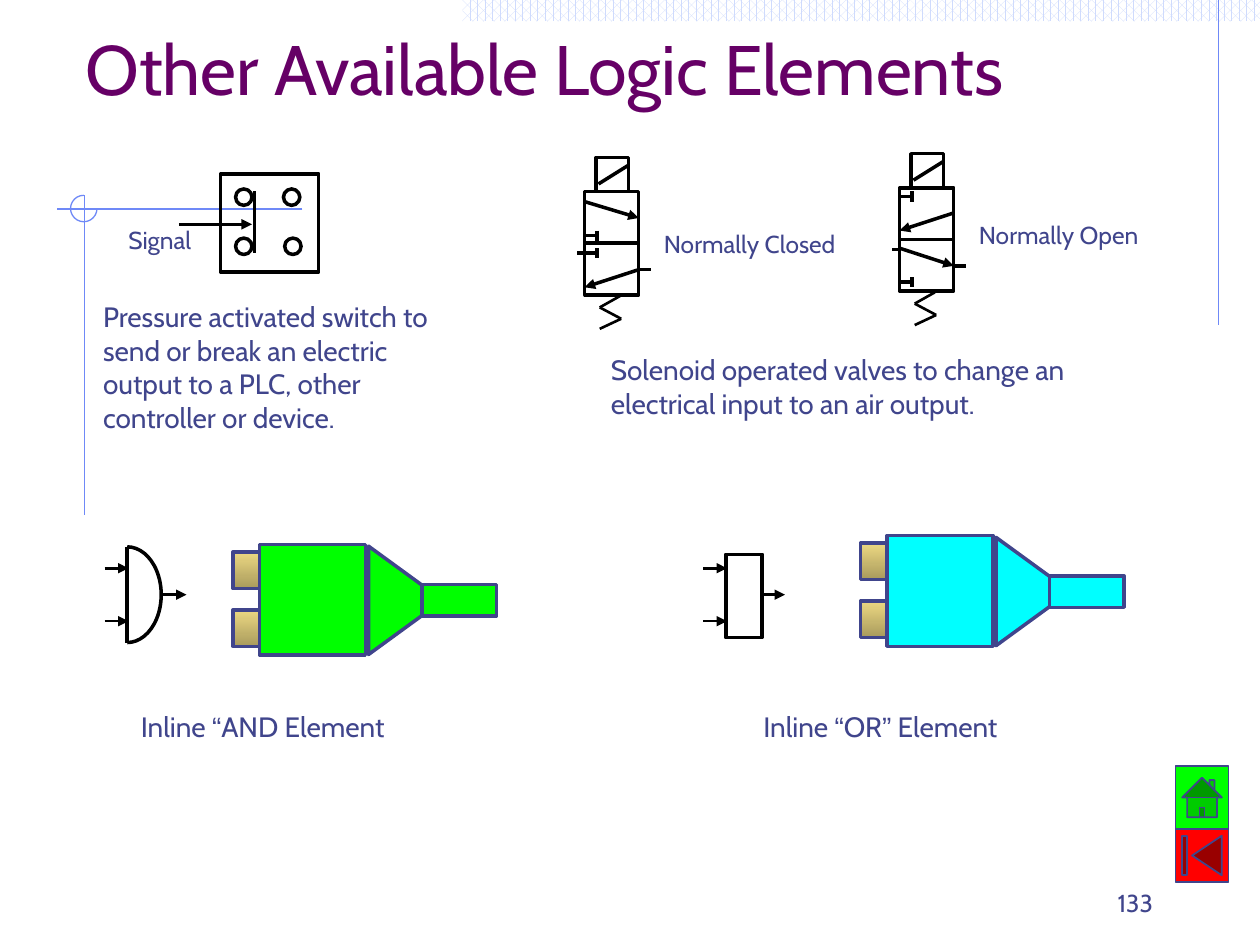
"""Build the slide on other available pneumatic logic elements."""
from dataclasses import dataclass
from itertools import groupby

from lxml import etree
from pptx import Presentation
from pptx import util as u
from pptx.dml.color import RGBColor
from pptx.enum import dml, shapes, text
from pptx.oxml.ns import qn


@dataclass(frozen=True)
class Theme:
    title: str = "660066"
    ink: str = "40458C"
    guide: str = "6F89F7"
    band: str = "CFDBFD"
    black: str = "000000"
    white: str = "FFFFFF"
    green: str = "00FF00"
    cyan: str = "00FFFF"
    red: str = "FF0000"
    brass: tuple = ("ECD882", "A99B5D")
    font: str = "Cabin"
    quote_font: str = "Arial"
    title_size: int = 40
    body_size: int = 16
    label_size: int = 14
    hairline: float = 0.75
    thin: float = 1.5
    thick: float = 2


THEME = Theme()
KIND = shapes.MSO_SHAPE
COLUMNS, ROWS = 10, 7.5
CELL = u.Inches(1)

TITLE = ("Other Available Logic Elements", (0.58, 0.35, 8.92, 0.57))
PAGE_NUMBER = ("133", (7.17, 6.83, 2.08, 0.5))
BODIES = [
    ("Solenoid operated valves to change an electrical input to an air output.",
     (4.75, 2.75, 4.23, 0.64)),
    ("Pressure activated switch to send or break an electric output to a PLC, "
     "other controller or device.", (0.72, 2.33, 3.09, 1.17)),
]
LABELS = [
    ("Signal", (0.92, 1.74, 0.78, 0.33)),
    ("Normally Closed", (5.17, 1.77, 1.65, 0.33)),
    ("Normally Open", (7.67, 1.7, 1.65, 0.33)),
]
CAPTION = ("Inline “AND Element\tInline “OR” Element", (1.02, 5.58, 8.73, 0.37))
CAPTION_TAB = 4.94

GUIDES = [(9.67, 0, 9.67, 2.58), (2.4, 1.66, 0.45, 1.66), (0.67, 1.55, 0.67, 4.09)]
CONTACTS = [(1.87, 1.89), (2.26, 1.89), (1.87, 1.5), (2.25, 1.5)]

VALVE_BOXES = [(0, 0.27, 0.43, 0.41), (0, 0.68, 0.43, 0.41), (0.09, 0, 0.26, 0.27)]
VALVE_LINES = [(0.43, 0.89, 0.53, 0.89), (0.01, 0.76, -0.06, 0.76), (0.11, 0.21, 0.35, 0.06)]
SPRING = [(0.28, 1.1), (0.12, 1.19), (0.29, 1.28), (0.12, 1.36)]
VALVES = [
    {"origin": (4.64, 1.25), "stops": (0.62, 0.76),
     "flows": [(0, 0.35, 0.43, 0.48), (0.43, 0.89, 0, 1.03)]},
    {"origin": (7.14, 1.22), "stops": (0.34, 1.02),
     "flows": [(0.43, 0.47, 0, 0.61), (0, 0.75, 0.43, 0.89)]},
]
PLUGS = [((1.85, 4.32), THEME.green), ((6.83, 4.25), THEME.cyan)]
PLUG_PARTS = [
    (KIND.RECTANGLE, (0.21, 0, 0.84, 0.88), 0),
    (KIND.ISOSCELES_TRIANGLE, (0.94, 0.15, 0.86, 0.59), 90),
    (KIND.RECTANGLE, (1.5, 0.32, 0.59, 0.25), 0),
]
PLUG_CAPS = [(0, 0.52, 0.21, 0.29), (0, 0.06, 0.21, 0.29)]
GATE_ORIGINS = [(0.83, 4.34), (5.58, 4.34)]
GATE_ARROWS = [(0, 0.17, 0.19, 0.17), (0, 0.59, 0.19, 0.59), (0.46, 0.38, 0.65, 0.38)]
BUTTONS = [
    (KIND.ACTION_BUTTON_BEGINNING, (9.33, 6.58, 0.42, 0.42), THEME.red),
    (KIND.ACTION_BUTTON_HOME, (9.33, 6.08, 0.42, 0.5), THEME.green),
]


def rgb(value):
    return RGBColor.from_string(value)


def emu(values):
    return [u.Emu(round(value * CELL)) for value in values]


def moved(origin, place):
    x, y, *rest = place
    return (origin[0] + x, origin[1] + y, *rest)


def moved_line(origin, ends):
    return moved(origin, ends[:2]) + moved(origin, ends[2:])


def add_line(page, ends, color=THEME.black, width=THEME.thick, arrow=False):
    line = page.shapes.add_connector(shapes.MSO_CONNECTOR.STRAIGHT, *emu(ends))
    line.line.color.rgb = rgb(color)
    line.line.width = u.Pt(width)
    if arrow:
        etree.SubElement(line.line._get_or_add_ln(), qn("a:tailEnd"), type="triangle")
    etree.SubElement(line._element.spPr, qn("a:effectLst"))


def add_form(page, kind, place, fill=None, color=THEME.black, width=THEME.thick, turn=0):
    form = page.shapes.add_shape(kind, *emu(place))
    form.shadow.inherit = False
    form.rotation = turn
    if fill:
        form.fill.solid()
        form.fill.fore_color.rgb = rgb(fill)
    else:
        form.fill.background()
    form.line.color.rgb = rgb(color)
    form.line.width = u.Pt(width)
    return form


def add_arc(page, place, start, end, **style):
    arc = add_form(page, KIND.ARC, place, **style)
    for index, degrees in enumerate((start, end)):
        arc.adjustments[index] = degrees * 0.6


def add_text(page, content, place, size, color=THEME.ink, align=text.PP_ALIGN.LEFT,
             anchor=text.MSO_ANCHOR.TOP, tab=None):
    box = page.shapes.add_textbox(*emu(place))
    frame = box.text_frame
    frame.word_wrap = True
    frame.vertical_anchor = anchor
    para = frame.paragraphs[0]
    para.alignment = align
    if tab:
        stops = etree.SubElement(para._p.get_or_add_pPr(), qn("a:tabLst"))
        etree.SubElement(stops, qn("a:tab"), pos=str(emu([tab])[0]), algn="l")
    for is_quote, letters in groupby(content, key=lambda letter: letter in "“”"):
        span = para.add_run()
        span.text = "".join(letters)
        span.font.name = THEME.quote_font if is_quote else THEME.font
        span.font.size = u.Pt(size)
        span.font.color.rgb = rgb(color)


def add_backdrop(page):
    band = add_form(page, KIND.RECTANGLE, (3.67, 0, COLUMNS - 3.67, 0.17))
    band.fill.patterned()
    band.fill.pattern = dml.MSO_PATTERN.PERCENT_60
    band.fill.fore_color.rgb = rgb(THEME.band)
    band.fill.back_color.rgb = rgb(THEME.white)
    band.line.fill.background()
    for ends in GUIDES:
        add_line(page, ends, THEME.guide, THEME.hairline)
    add_arc(page, (0.56, 1.55, 0.21, 0.21), 0, 270, color=THEME.guide, width=THEME.hairline)


def add_switch(page):
    add_line(page, (1.42, 1.78, 2, 1.78), arrow=True)
    add_form(page, KIND.RECTANGLE, (1.75, 1.38, 0.78, 0.78))
    for x, y in CONTACTS:
        add_form(page, KIND.OVAL, (x, y, 0.13, 0.13), THEME.white)
    add_line(page, (2.02, 1.52, 2.02, 2.01))


def add_valve(page, origin, stops, flows):
    for place in VALVE_BOXES:
        add_form(page, KIND.RECTANGLE, moved(origin, place))
    stop_lines = [ends for y in stops
                  for ends in ((0.01, y, 0.1, y), (0.1, y - 0.04, 0.1, y + 0.04))]
    for ends in VALVE_LINES + stop_lines:
        add_line(page, moved_line(origin, ends))
    for start, end in zip(SPRING, SPRING[1:]):
        add_line(page, moved_line(origin, start + end), width=THEME.thin)
    for ends in flows:
        add_line(page, moved_line(origin, ends), arrow=True)


def add_plug(page, origin, color):
    for kind, place, turn in PLUG_PARTS:
        add_form(page, kind, moved(origin, place), color, THEME.ink, turn=turn)
    for place in PLUG_CAPS:
        cap = add_form(page, KIND.RECTANGLE, moved(origin, place), color=THEME.ink)
        cap.fill.gradient()
        cap.fill.gradient_angle = 270
        for stop, shade in zip(cap.fill.gradient_stops, THEME.brass):
            stop.color.rgb = rgb(shade)


def add_gates(page):
    add_arc(page, (0.74, 4.34, 0.54, 0.76), 270, 90)
    add_line(page, (1.01, 4.34, 1.01, 5.1))
    add_form(page, KIND.RECTANGLE, (5.76, 4.4, 0.29, 0.66))
    for origin in GATE_ORIGINS:
        for ends in GATE_ARROWS:
            add_line(page, moved_line(origin, ends), width=THEME.thin, arrow=True)


def main():
    deck = Presentation()
    deck.slide_width, deck.slide_height = emu((COLUMNS, ROWS))
    page = deck.slides.add_slide(deck.slide_layouts[6])
    add_backdrop(page)
    add_text(page, *PAGE_NUMBER, THEME.label_size, align=text.PP_ALIGN.RIGHT,
             anchor=text.MSO_ANCHOR.BOTTOM)
    add_text(page, *TITLE, THEME.title_size, THEME.title, anchor=text.MSO_ANCHOR.BOTTOM)
    for group, size in ((BODIES, THEME.body_size), (LABELS, THEME.label_size)):
        for content, place in group:
            add_text(page, content, place, size)
    add_switch(page)
    for valve in VALVES:
        add_valve(page, **valve)
    for origin, color in PLUGS:
        add_plug(page, origin, color)
    add_text(page, *CAPTION, THEME.body_size, tab=CAPTION_TAB)
    add_gates(page)
    for kind, place, fill in BUTTONS:
        add_form(page, kind, place, fill, THEME.ink, 1)
    deck.save("out.pptx")


if __name__ == "__main__":
    main()
